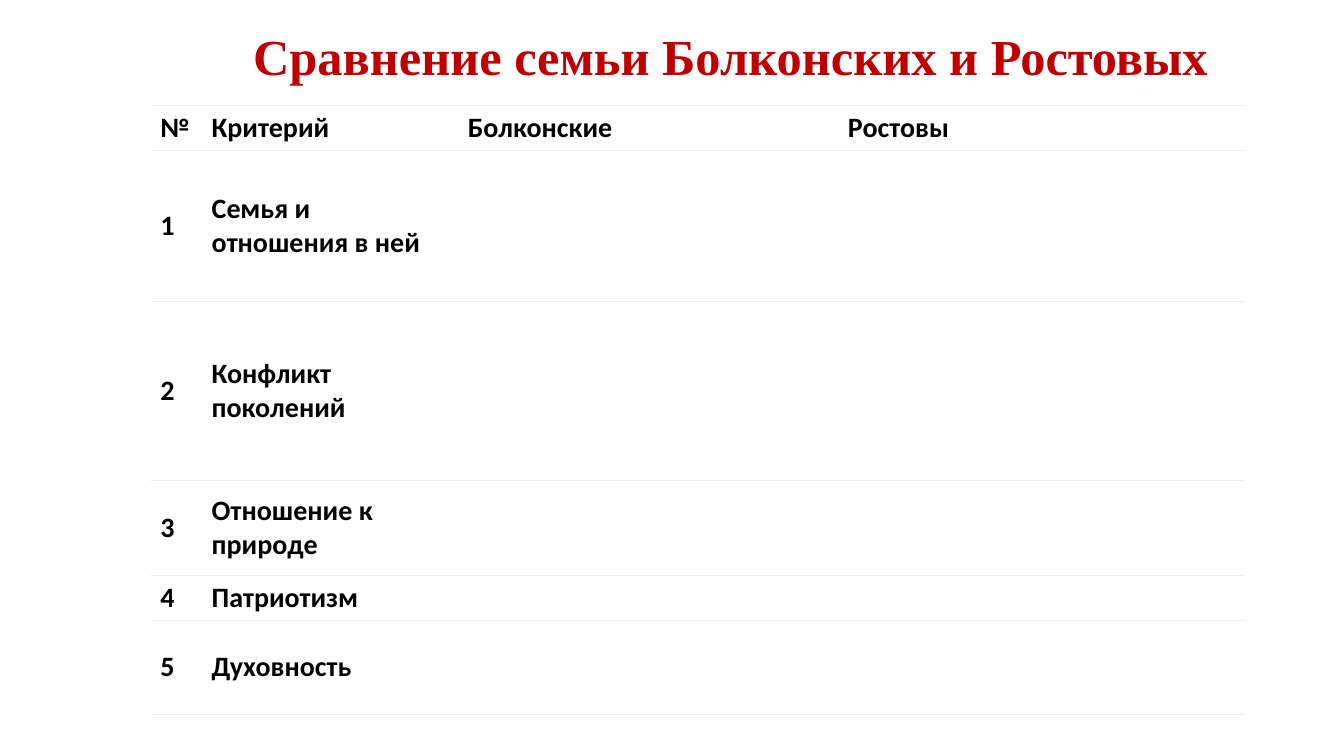
from lxml import etree
from pptx import Presentation
from pptx.dml.color import RGBColor
from pptx.enum import text
from pptx.oxml import ns
from pptx.util import Inches, Pt

WHITE = RGBColor(0xFF, 0xFF, 0xFF)
BLACK = RGBColor(0, 0, 0)
RED = RGBColor(0xC0, 0, 0)
GREY = RGBColor(0xEB, 0xED, 0xED)

COLS = [0.51, 2.54, 3.77, 4.01]
ROWS = [0.38, 1.5, 1.78, 0.94, 0.38, 0.94]
HEADS = ["№", "Критерий", "Болконские", "Ростовы"]
TOPICS = [
    "Семья и отношения в ней",
    "Конфликт поколений",
    "Отношение к природе",
    "Патриотизм",
    "Духовность",
]


def style(para, font, size, color):
    for run in para.runs:
        run.font.name = font
        run.font.size = Pt(size)
        run.font.bold = True
        run.font.color.rgb = color


def add_title(slide, words):
    title = slide.shapes.title
    title.left, title.top = Inches(2.51), Inches(0.24)
    title.width, title.height = Inches(9.57), Inches(0.61)
    title.fill.solid()
    title.fill.fore_color.rgb = WHITE
    frame = title.text_frame
    frame.text = words
    frame.word_wrap = True
    frame.auto_size = text.MSO_AUTO_SIZE.NONE
    frame.vertical_anchor = text.MSO_ANCHOR.MIDDLE
    frame.margin_left = frame.margin_right = Inches(0)
    frame.margin_top = frame.margin_bottom = Inches(0)
    para = frame.paragraphs[0]
    para.alignment = text.PP_ALIGN.LEFT
    style(para, "Times New Roman", 36, RED)


def add_rules(cell):
    props = cell._tc.get_or_add_tcPr()
    for spot, side in enumerate(["lnL", "lnR", "lnT", "lnB"]):
        line = etree.Element(ns.qn("a:" + side), w=str(Pt(0.75)))
        if side in ("lnT", "lnB"):
            fill = etree.SubElement(line, ns.qn("a:solidFill"))
            etree.SubElement(fill, ns.qn("a:srgbClr"), val=str(GREY))
        else:
            etree.SubElement(line, ns.qn("a:noFill"))
        props.insert(spot, line)


def fill_cell(cell, words):
    cell.fill.solid()
    cell.fill.fore_color.rgb = WHITE
    cell.vertical_anchor = text.MSO_ANCHOR.MIDDLE
    cell.margin_left = cell.margin_right = Inches(0.09)
    cell.margin_top = cell.margin_bottom = Inches(0.05)
    add_rules(cell)
    if words:
        cell.text_frame.text = words
        style(cell.text_frame.paragraphs[0], "Calibri", 20, BLACK)


def add_grid(slide, data):
    frame = slide.shapes.add_table(
        len(ROWS), len(COLS), Inches(1.5), Inches(1.05), Inches(10.83), Inches(6.03)
    )
    table = frame.table
    for col, width in zip(table.columns, COLS):
        col.width = Inches(width)
    for row, height, line in zip(table.rows, ROWS, data):
        row.height = Inches(height)
        for cell, words in zip(row.cells, line):
            fill_cell(cell, words)
    frame.height = Inches(6.03)


def main():
    deck = Presentation()
    deck.slide_width, deck.slide_height = Inches(13.33), Inches(7.5)
    slide = deck.slides.add_slide(deck.slide_layouts[5])
    topics = [[str(num), topic, "", ""] for num, topic in enumerate(TOPICS, 1)]
    add_grid(slide, [HEADS] + topics)
    add_title(slide, "Сравнение семьи Болконских и Ростовых")
    deck.save("out.pptx")


if __name__ == "__main__":
    main()
